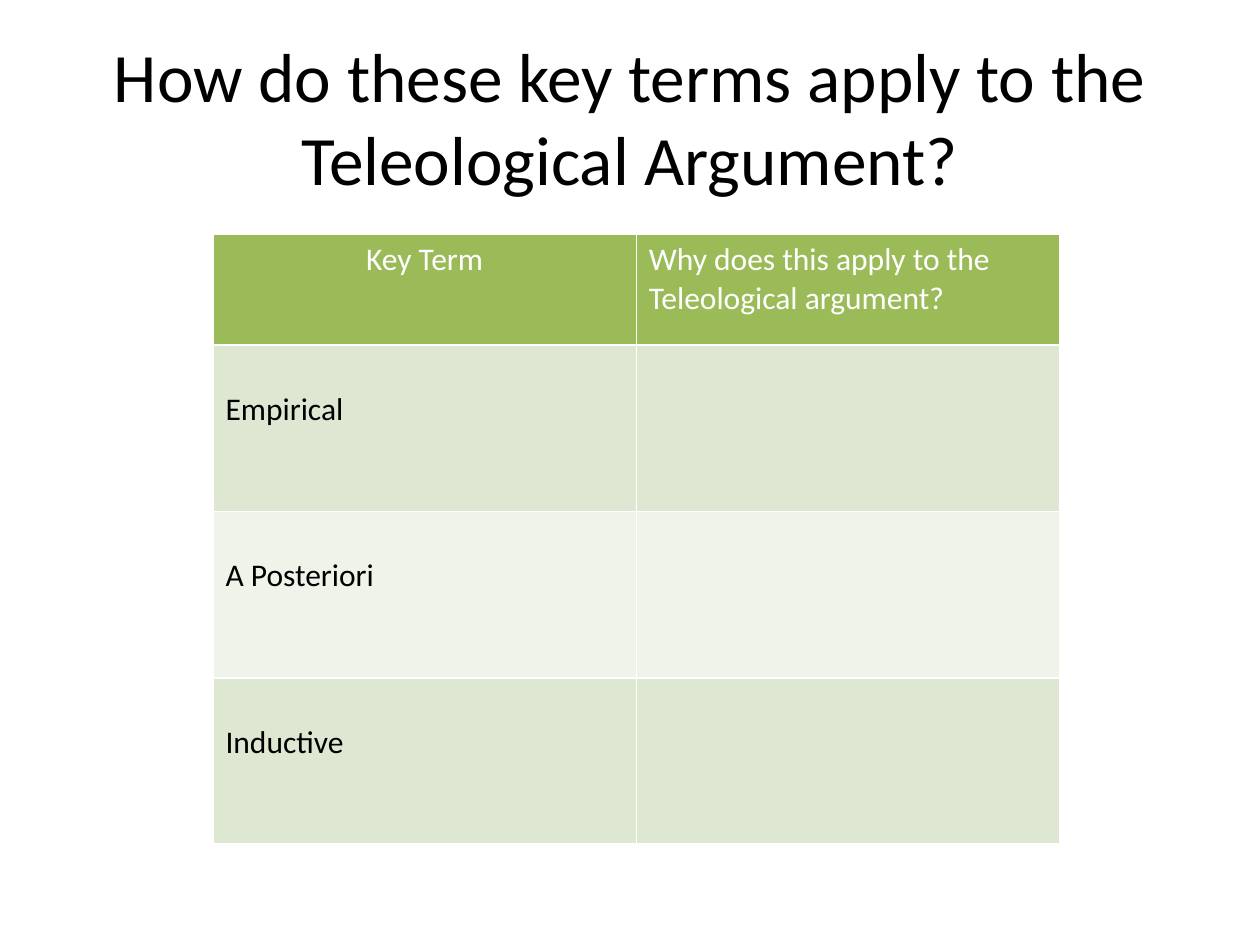
from lxml import etree
from pptx import Presentation
from pptx.dml.color import RGBColor
from pptx.enum.text import MSO_ANCHOR, PP_ALIGN
from pptx.oxml.ns import qn
from pptx.util import Inches, Pt

CENTER, LEFT = PP_ALIGN.CENTER, PP_ALIGN.LEFT
MIDDLE = MSO_ANCHOR.MIDDLE

TITLE = "How do these key terms apply to the Teleological Argument?"
HEADINGS = [
    ("Key Term", CENTER),
    ("Why does this apply to the Teleological argument?", LEFT),
]
KEY_TERMS = ["Empirical", "A Posteriori", "Inductive"]

COLORS = {
    "text": "000000",
    "heading": "FFFFFF",
    "border": "FFFFFF",
    "header": "9BBB59",
    "odd": "DEE7D1",
    "even": "EFF3EA",
}
FONT = "Calibri"
SLIDE_W, SLIDE_H = 10, 7.5
TITLE_BOX = (0.05 * SLIDE_W, 0.04 * SLIDE_H, 0.9 * SLIDE_W, SLIDE_H / 6)
TABLE_LEFT, TABLE_TOP = 1.69, 1.86
COLUMN_W, HEADER_H, TERM_H = 3.36, 0.88, 1.32
TERM_INSET = 0.36
BORDER_PT = 1


def write(frame, text, size, color, align):
    frame.text = text
    paragraph = frame.paragraphs[0]
    paragraph.alignment = align
    for font in [paragraph.font] + [run.font for run in paragraph.runs]:
        font.name = FONT
        font.size = Pt(size)
        font.bold = False
        font.color.rgb = RGBColor.from_string(COLORS[color])


def style_cell(cell, fill):
    properties = cell._tc.get_or_add_tcPr()
    for side in ("a:lnL", "a:lnR", "a:lnT", "a:lnB"):
        line = etree.SubElement(properties, qn(side), w=str(Pt(BORDER_PT)))
        solid = etree.SubElement(line, qn("a:solidFill"))
        etree.SubElement(solid, qn("a:srgbClr"), val=COLORS["border"])
    cell.fill.solid()
    cell.fill.fore_color.rgb = RGBColor.from_string(COLORS[fill])


def add_title(slide):
    title = slide.shapes.add_textbox(*map(Inches, TITLE_BOX)).text_frame
    title.word_wrap = True
    title.vertical_anchor = MIDDLE
    write(title, TITLE, 39.6, "text", CENTER)


def add_terms(slide):
    row_heights = [HEADER_H] + [TERM_H] * len(KEY_TERMS)
    bounds = (TABLE_LEFT, TABLE_TOP, COLUMN_W * len(HEADINGS), sum(row_heights))
    terms = slide.shapes.add_table(
        len(row_heights), len(HEADINGS), *map(Inches, bounds)
    ).table
    for column in terms.columns:
        column.width = Inches(COLUMN_W)
    for row, height in zip(terms.rows, row_heights):
        row.height = Inches(height)

    for column, (heading, align) in enumerate(HEADINGS):
        cell = terms.cell(0, column)
        style_cell(cell, "header")
        write(cell.text_frame, heading, 18, "heading", align)
    for row, term in enumerate(KEY_TERMS, 1):
        for column, text in enumerate((term, "")):
            cell = terms.cell(row, column)
            style_cell(cell, "odd" if row % 2 else "even")
            write(cell.text_frame, text, 18, "text", LEFT)
        terms.cell(row, 0).margin_top = Inches(TERM_INSET)


def main():
    deck = Presentation()
    deck.slide_width, deck.slide_height = Inches(SLIDE_W), Inches(SLIDE_H)
    slide = deck.slides.add_slide(deck.slide_layouts[6])
    add_title(slide)
    add_terms(slide)
    deck.save("out.pptx")


if __name__ == "__main__":
    main()
